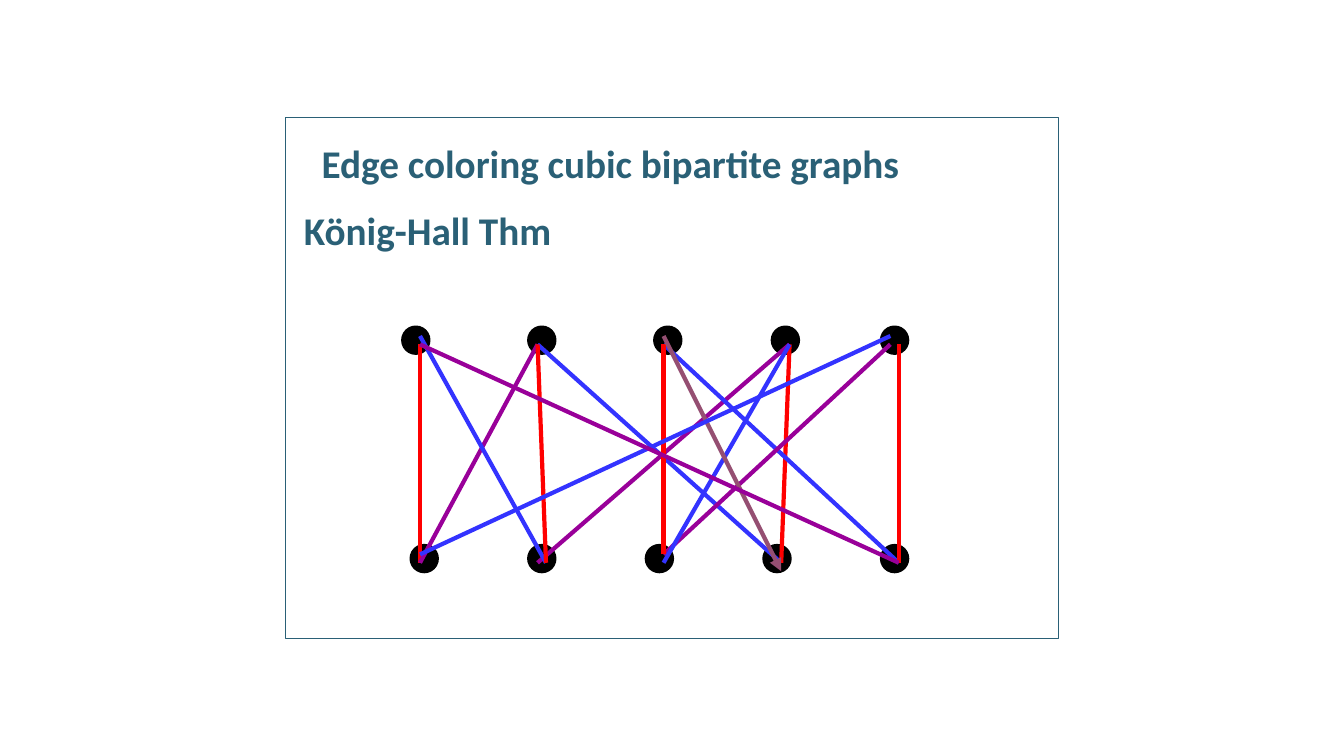
from lxml import etree
from pptx import Presentation
from pptx import util as u
from pptx.dml import color
from pptx.enum import shapes, text
from pptx.oxml import ns

COLORS = {
    "white": "FFFFFF",
    "black": "000000",
    "teal": "2A6076",
    "red": "FF0000",
    "purple": "990099",
    "blue": "3333FF",
    "mauve": "954F72",
}
VERTEX_SIZE = 18
VERTEX_ROWS = {234: (288, 378, 468, 552, 630), 390: (294, 378, 462, 546, 630)}
EDGES = [
    ("red", (300, 246), (300, 402)),
    ("purple", (300, 402), (384, 246)),
    ("blue", (384, 246), (558, 402)),
    ("red", (558, 402), (564, 246)),
    ("purple", (564, 246), (384, 402)),
    ("blue", (390, 402), (300, 240)),
    ("blue", (474, 246), (642, 402)),
    ("red", (642, 402), (642, 246)),
    ("purple", (636, 246), (474, 396)),
    ("red", (474, 396), (474, 246)),
    ("blue", (564, 246), (474, 402)),
    ("mauve", (474, 240), (558, 408)),
    ("red", (384, 246), (390, 402)),
    ("blue", (300, 396), (636, 240)),
    ("purple", (300, 246), (642, 402)),
]
HEADINGS = [("Edge coloring cubic bipartite graphs", 12.66), ("König-Hall Thm", 0)]


def rgb(name):
    """Return the named colour."""
    return color.RGBColor.from_string(COLORS[name])


def add_filled(page, kind, bounds, fill, outline, weight):
    """Add a preset shape with a solid fill and outline."""
    shape = page.shapes.add_shape(kind, *map(u.Pt, bounds))
    shape.shadow.inherit = False
    shape.fill.solid()
    shape.fill.fore_color.rgb = rgb(fill)
    shape.line.color.rgb = rgb(outline)
    shape.line.width = u.Pt(weight)


def add_edge(page, name, start, end):
    """Add a straight coloured edge, with an arrowhead on the mauve one."""
    edge = page.shapes.add_connector(
        shapes.MSO_CONNECTOR.STRAIGHT, *map(u.Pt, start + end)
    )
    edge.line.color.rgb = rgb(name)
    edge.line.width = u.Pt(3)
    properties = edge.element.spPr
    if name == "mauve":
        outline = properties.find(ns.qn("a:ln"))
        etree.SubElement(outline, ns.qn("a:tailEnd"), type="triangle")
    etree.SubElement(properties, ns.qn("a:effectLst"))


def add_headings(page, bounds):
    """Add the heading paragraphs in one text box."""
    frame = page.shapes.add_textbox(*map(u.Pt, bounds)).text_frame
    frame.word_wrap = True
    frame.auto_size = text.MSO_AUTO_SIZE.SHAPE_TO_FIT_TEXT
    for index, (wording, indent) in enumerate(HEADINGS):
        para = frame.add_paragraph() if index else frame.paragraphs[0]
        para.space_before = u.Pt(14)
        para._p.get_or_add_pPr().set("indent", str(u.Pt(indent)))
        span = para.add_run()
        span.text = wording
        span.font.name = "Calibri"
        span.font.size = u.Pt(28)
        span.font.bold = True
        span.font.color.rgb = rgb("teal")


def main():
    """Build the slide and save it."""
    deck = Presentation()
    deck.slide_width, deck.slide_height = u.Pt(960), u.Pt(540)
    page = deck.slides.add_slide(deck.slide_layouts[6])
    preset = shapes.MSO_SHAPE
    add_filled(page, preset.RECTANGLE, (204, 84, 552, 372), "white", "teal", 0.75)
    for top, lefts in VERTEX_ROWS.items():
        for left in lefts:
            bounds = (left, top, VERTEX_SIZE, VERTEX_SIZE)
            add_filled(page, preset.OVAL, bounds, "black", "black", 3)
    for edge in EDGES:
        add_edge(page, *edge)
    add_headings(page, (210, 96, 534, 91.5))
    deck.save("out.pptx")


if __name__ == "__main__":
    main()
